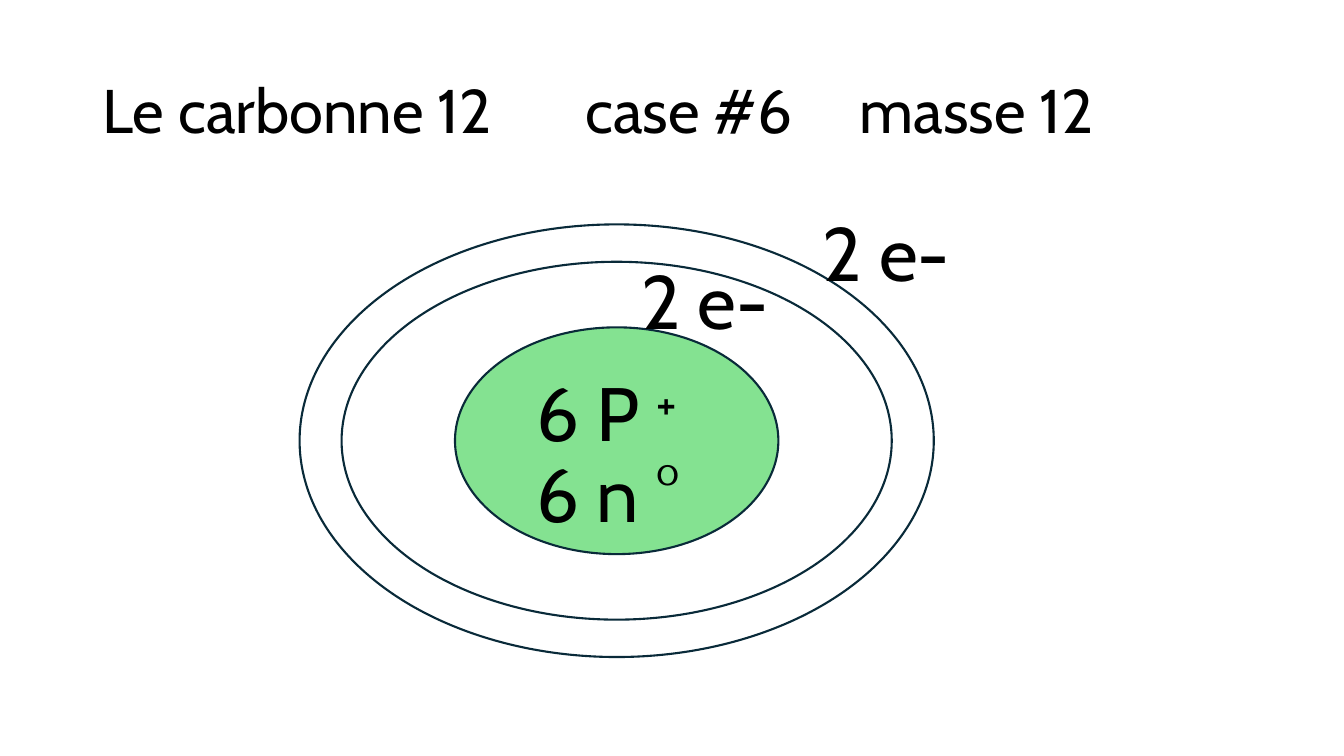
from pptx import Presentation
from pptx.dml.color import RGBColor
from pptx.enum.shapes import MSO_SHAPE as SHAPE
from pptx.enum.text import MSO_ANCHOR as ANCHOR, MSO_AUTO_SIZE as AUTO, PP_ALIGN as ALIGN
from pptx.oxml.ns import qn
from pptx.util import Pt
from lxml.etree import SubElement

# Content
TITLE = ["Le carbonne 12", "case #6", "masse 12"]
TITLE_BOX = (66, 29, 828, 104)
TITLE_TABS = (345, 541)
CENTER = (440.5, 314.8)
ELLIPSES = [  # width, height, fill: outer shell, inner shell, nucleus
    (453, 309, "FFFFFF"),
    (393, 255.6, "FFFFFF"),
    (231, 162, "84E291"),
]
LABELS = [  # left, top, width, text, superscript
    (376, 258, 150, "6 P ", "+"),
    (451, 178, 130, "2 e-", ""),
    (580.5, 143.5, 216, "2 e-", ""),
    (376, 316, 146, "6 n °", ""),
]
LABEL_H = 72.7


def rgb(color):
    return RGBColor.from_string(color)


def add_run(p, text, size):
    r = p.add_run()
    r.text = text
    for name, value in {"name": "Cabin", "size": Pt(size)}.items():
        setattr(r.font, name, value)
    r.font.color.rgb = rgb("000000")
    return r


prs = Presentation()
prs.slide_width, prs.slide_height = Pt(960), Pt(540)
s = prs.slides.add_slide(prs.slide_layouts[5])

# Title, its three parts set on tab stops
title = s.shapes.title
title.left, title.top, title.width, title.height = map(Pt, TITLE_BOX)
tf = title.text_frame
for name, value in {"word_wrap": True, "auto_size": AUTO.NONE,
                    "vertical_anchor": ANCHOR.MIDDLE}.items():
    setattr(tf, name, value)
p = tf.paragraphs[0]
p.alignment, p.line_spacing = ALIGN.LEFT, 0.9
tabs = SubElement(p._p.get_or_add_pPr(), qn("a:tabLst"))
for pos in TITLE_TABS:
    SubElement(tabs, qn("a:tab"), pos=str(Pt(pos)), algn="l")
add_run(p, "\t".join(TITLE), 44)

# Concentric shells and nucleus
cx, cy = CENTER
for w, h, fill in ELLIPSES:
    sp = s.shapes.add_shape(SHAPE.OVAL, Pt(cx - w / 2), Pt(cy - h / 2), Pt(w), Pt(h))
    sp.shadow.inherit = False
    sp.fill.solid()
    sp.fill.fore_color.rgb = rgb(fill)
    sp.line.color.rgb = rgb("092A39")
    sp.line.width = Pt(1.5)

# Particle counts
for x, y, w, text, sup in LABELS:
    tf = s.shapes.add_textbox(Pt(x), Pt(y), Pt(w), Pt(LABEL_H)).text_frame
    tf.word_wrap, tf.auto_size = True, AUTO.SHAPE_TO_FIT_TEXT
    p = tf.paragraphs[0]
    add_run(p, text, 54)
    if sup:
        add_run(p, sup, 54)._r.get_or_add_rPr().set("baseline", "30000")

prs.save("out.pptx")
